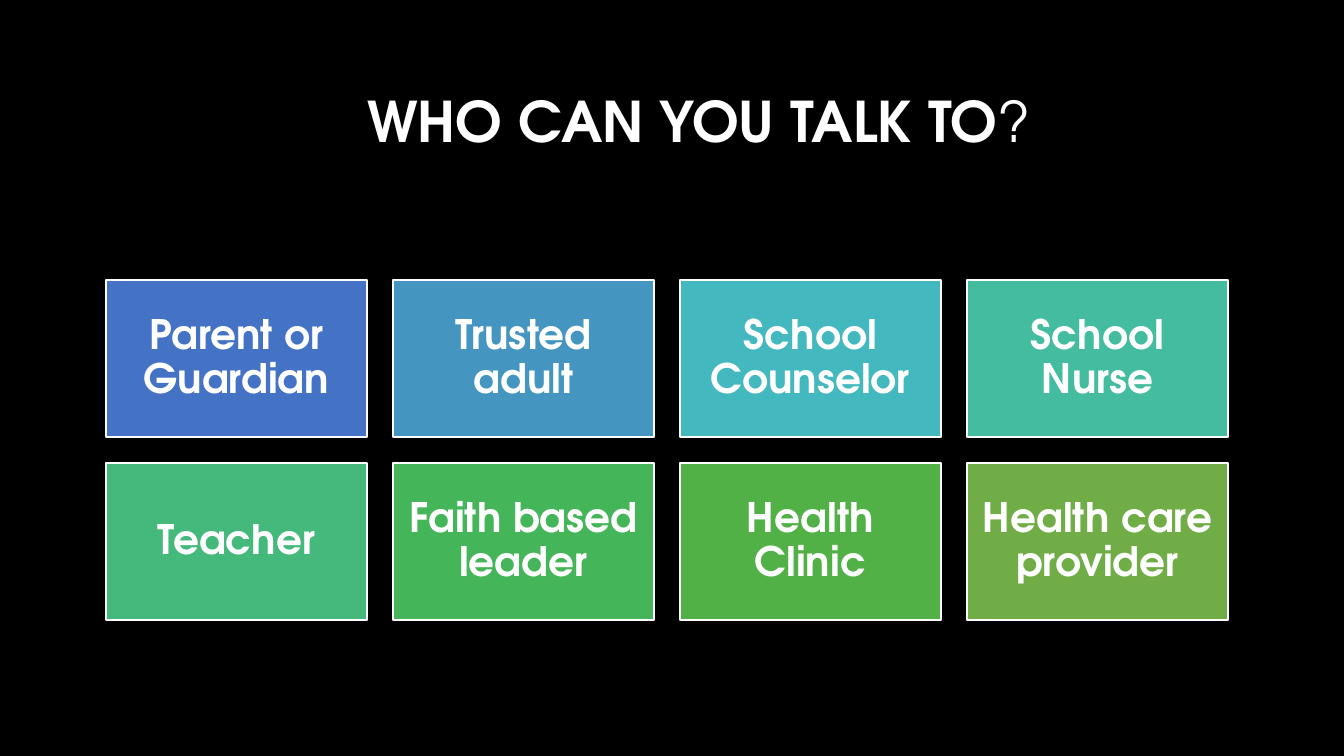
from pptx import Presentation, util as u
from pptx.dml.color import RGBColor
from pptx.enum import shapes, text

TITLE = [("WHO CAN YOU TALK TO", True), ("?", False)]
PEOPLE = [
    ("Parent or Guardian", "4472C4"),
    ("Trusted adult", "4496C1"),
    ("School Counselor", "43B8BF"),
    ("School Nurse", "43BCA0"),
    ("Teacher", "44B97B"),
    ("Faith based leader", "45B559"),
    ("Health Clinic", "52B146"),
    ("Health care provider", "70AD47"),
]

THEME = {
    "font": "TeX Gyre Adventor",
    "background": "000000",
    "foreground": "FFFFFF",
    "title_size": 40,
    "card_size": 29,
    "outline": 1.5,
}

SLIDE_SIZE = (1344, 756)
TITLE_AREA = (138, 42, 1122, 164)
GRID_LEFT, GRID_TOP = 106, 280
CARD_WIDTH, CARD_HEIGHT = 261, 157
GAP, COLUMNS = 26, 4
INSET = 12


def px(length):
    return round(length * u.Inches(1) / 100.8)


def color(name):
    return RGBColor.from_string(THEME.get(name, name))


def set_all(target, values):
    for name, value in values.items():
        setattr(target, name, value)


def write(box, spans, size, inset):
    """Fill the box with one centred paragraph of (wording, bold) spans."""
    frame = box.text_frame
    set_all(frame, {"word_wrap": True, "vertical_anchor": text.MSO_ANCHOR.MIDDLE})
    sides = ("left", "top", "right", "bottom")
    set_all(frame, {f"margin_{side}": px(inset) for side in sides})
    para = frame.paragraphs[0]
    set_all(para, {"alignment": text.PP_ALIGN.CENTER, "line_spacing": 0.9})
    for wording, bold in spans:
        span = para.add_run()
        span.text = wording
        set_all(span.font, {"name": THEME["font"], "size": u.Pt(THEME[size]), "bold": bold})
        span.font.color.rgb = color("foreground")


def add_card(page, index, wording, fill):
    row, column = divmod(index, COLUMNS)
    left = GRID_LEFT + column * (CARD_WIDTH + GAP)
    top = GRID_TOP + row * (CARD_HEIGHT + GAP)
    area = map(px, (left, top, CARD_WIDTH, CARD_HEIGHT))
    card = page.shapes.add_shape(shapes.MSO_SHAPE.RECTANGLE, *area)
    card.shadow.inherit = False
    card.fill.solid()
    card.fill.fore_color.rgb = color(fill)
    card.line.color.rgb = color("foreground")
    card.line.width = u.Pt(THEME["outline"])
    write(card, [(wording, True)], "card_size", INSET)


def main():
    deck = Presentation()
    deck.slide_width, deck.slide_height = map(px, SLIDE_SIZE)
    page = deck.slides.add_slide(deck.slide_layouts[6])
    page.background.fill.solid()
    page.background.fill.fore_color.rgb = color("background")

    title = page.shapes.add_textbox(*map(px, TITLE_AREA))
    write(title, TITLE, "title_size", INSET)
    for index, (wording, fill) in enumerate(PEOPLE):
        add_card(page, index, wording, fill)
    deck.save("out.pptx")


if __name__ == "__main__":
    main()
